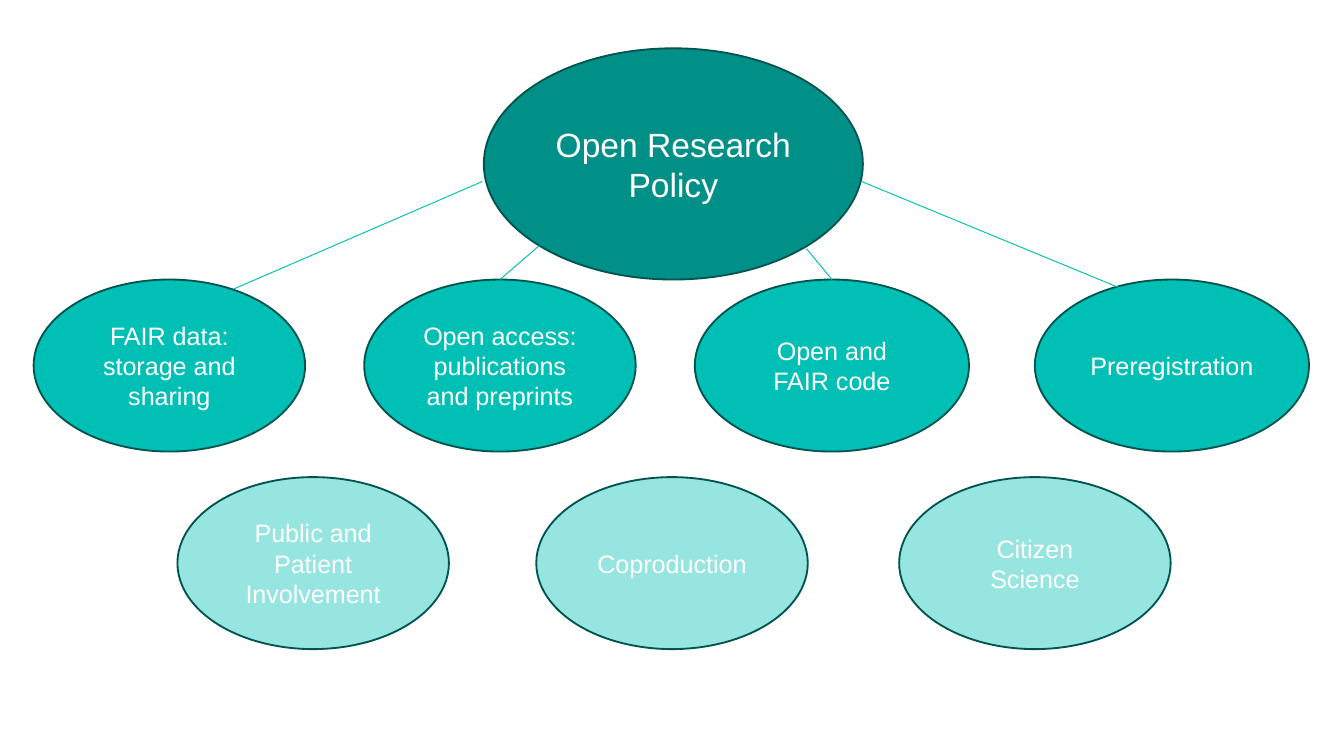
import pptx
import pptx.dml.color
import pptx.enum.shapes
import pptx.enum.text
import pptx.oxml.ns
import pptx.util
from lxml import etree

Inches = pptx.util.Inches
Pt = pptx.util.Pt
qn = pptx.oxml.ns.qn

COLORS = {
    "policy": "009088",
    "theme": "00C0B5",
    "outline": "00544F",
    "text": "FFFFFF",
}
THEME_HEIGHT = 1.28
PILLAR_TOP = 2.08
PARTICIPATION_TOP = 3.55

PILLARS = [
    ("FAIR data: storage and sharing", 0.25, 2.02),
    ("Open access: publications and preprints", 2.71, 2.02),
    ("Open and FAIR code", 5.17, 2.04),
    ("Preregistration", 7.7, 2.04),
]
PARTICIPATION = [
    ("Public and Patient Involvement", 1.32, 2.02),
    ("Coproduction", 3.99, 2.02),
    ("Citizen Science", 6.69, 2.02),
]
LINKS = [
    (3.59, 1.35, 1.74, 2.15),
    (6.19, 2.08, 6, 1.85),
    (4.01, 1.83, 3.72, 2.08),
    (6.41, 1.35, 8.35, 2.15),
]


def rgb(name):
    return pptx.dml.color.RGBColor.from_string(COLORS[name])


def add_ellipse(slide, label, left, top, width, height, color, size, opacity=100):
    ellipse = slide.shapes.add_shape(
        pptx.enum.shapes.MSO_SHAPE.OVAL,
        Inches(left), Inches(top), Inches(width), Inches(height))
    ellipse.shadow.inherit = False
    ellipse.fill.solid()
    ellipse.fill.fore_color.rgb = rgb(color)
    if opacity < 100:
        fill_color = ellipse._element.spPr.find(qn("a:solidFill"))[0]
        etree.SubElement(fill_color, qn("a:alpha"), val=str(opacity * 1000))
    ellipse.line.color.rgb = rgb("outline")
    ellipse.line.width = Pt(1)

    frame = ellipse.text_frame
    frame.word_wrap = True
    frame.vertical_anchor = pptx.enum.text.MSO_ANCHOR.MIDDLE
    paragraph = frame.paragraphs[0]
    paragraph.text = label
    paragraph.alignment = pptx.enum.text.PP_ALIGN.CENTER
    paragraph.font.name = "Arial"
    paragraph.font.size = Pt(size)
    paragraph.font.color.rgb = rgb("text")


def add_theme_row(slide, themes, top, opacity=100):
    for label, left, width in themes:
        add_ellipse(slide, label, left, top, width, THEME_HEIGHT, "theme", 13.5, opacity)


def add_link(slide, *ends):
    link = slide.shapes.add_connector(
        pptx.enum.shapes.MSO_CONNECTOR.STRAIGHT, *map(Inches, ends))
    link.line.color.rgb = rgb("theme")
    link.line.width = Pt(0.5)
    etree.SubElement(link._element.spPr, qn("a:effectLst"))


def main():
    deck = pptx.Presentation()
    deck.slide_width = Inches(10)
    deck.slide_height = Inches(10 * 9 / 16)
    slide = deck.slides.add_slide(deck.slide_layouts[6])

    add_ellipse(slide, "Open Research Policy", 3.6, 0.36, 2.82, 1.72, "policy", 18)
    add_theme_row(slide, PILLARS, PILLAR_TOP)
    add_theme_row(slide, PARTICIPATION, PARTICIPATION_TOP, opacity=41)
    for ends in LINKS:
        add_link(slide, *ends)

    deck.save("out.pptx")


if __name__ == "__main__":
    main()
